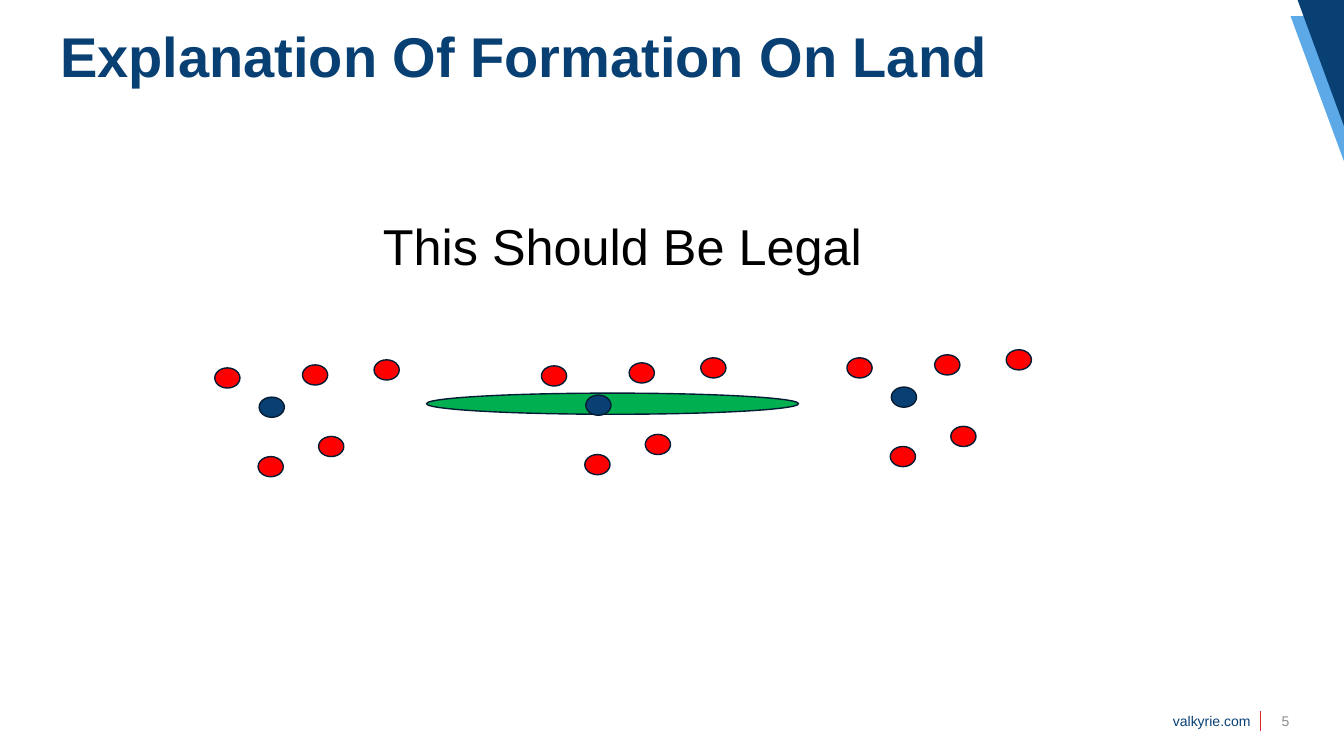
"""Build the slide that explains the legal formation on land."""
from lxml import etree
from pptx import Presentation
from pptx.dml.color import RGBColor
from pptx.enum.shapes import MSO_CONNECTOR, MSO_SHAPE
from pptx.enum.text import MSO_ANCHOR, PP_ALIGN
from pptx.oxml.ns import qn
from pptx.util import Inches, Pt

NAVY = RGBColor(0x09, 0x40, 0x74)
SKY = RGBColor(0x5D, 0xA9, 0xE8)
OUTLINE = RGBColor(0x04, 0x1C, 0x33)
GREEN = RGBColor(0x00, 0xB0, 0x50)
RED = RGBColor(0xFF, 0x00, 0x00)
DIVIDER = RGBColor(0xD9, 0x28, 0x2F)
GRAY = RGBColor(0x8C, 0x8C, 0x8C)
BLACK = RGBColor(0x00, 0x00, 0x00)

FORMATION_ORIGINS = [(5.37, 3.55), (2.13, 3.57), (8.4, 3.47)]
LEADER_OFFSET = (0.44, 0.37)
MEMBER_OFFSETS = [(0.87, 0.05), (0, 0.08), (1.58, 0), (1.03, 0.76), (0.43, 0.96)]


def add_corner(s, points, color):
    """Draw one filled corner stripe through the points."""
    corners = [(Inches(x), Inches(y)) for x, y in points]
    builder = s.shapes.build_freeform(*corners[0])
    builder.add_line_segments(corners[1:], close=True)
    sp = builder.convert_to_shape()
    sp.shadow.inherit = False
    sp.fill.solid()
    sp.fill.fore_color.rgb = color
    sp.line.fill.background()


def add_text(s, box, text, size, color, align=PP_ALIGN.LEFT, bold=False,
             anchor=MSO_ANCHOR.MIDDLE, wrap=True, spacing=1.0):
    """Add a single-line text box."""
    sp = s.shapes.add_textbox(*map(Inches, box))
    tf = sp.text_frame
    tf.word_wrap = wrap
    tf.vertical_anchor = anchor
    p = tf.paragraphs[0]
    p.alignment = align
    p.line_spacing = spacing
    r = p.add_run()
    r.text = text
    r.font.name = "Arial"
    r.font.size = Pt(size)
    r.font.bold = bold
    r.font.color.rgb = color


def add_ellipse(shapes, box, color):
    """Add an outlined ellipse to a slide or a group."""
    sp = shapes.add_shape(MSO_SHAPE.OVAL, *map(Inches, box))
    sp.shadow.inherit = False
    sp.fill.solid()
    sp.fill.fore_color.rgb = color
    sp.line.color.rgb = OUTLINE
    sp.line.width = Pt(1)


def add_formation(s, left, top):
    """Group a leader with the members around it."""
    group = s.shapes.add_group_shape()
    dots = [(LEADER_OFFSET, NAVY)] + [(offset, RED) for offset in MEMBER_OFFSETS]
    for (dx, dy), color in dots:
        add_ellipse(group.shapes, (left + dx, top + dy, 0.25, 0.2), color)


def add_divider(s, x, top, bottom):
    """Draw the vertical line beside the page number."""
    line = s.shapes.add_connector(MSO_CONNECTOR.STRAIGHT, Inches(x), Inches(top),
                                  Inches(x), Inches(bottom))
    line.line.color.rgb = DIVIDER
    line.line.width = Pt(1)
    etree.SubElement(line._element.spPr, qn("a:effectLst"))


def main():
    """Build and save the slide."""
    prs = Presentation()
    prs.slide_width, prs.slide_height = Inches(13.33), Inches(7.5)
    s = prs.slides.add_slide(prs.slide_layouts[6])

    add_corner(s, [(13.33, 0.16), (12.8, 0.16), (13.33, 1.6)], SKY)
    add_corner(s, [(13.33, 0), (12.87, 0), (13.33, 1.25)], NAVY)
    add_text(s, (11.31, 7.02, 1.19, 0.27), "valkyrie.com", 10, NAVY, PP_ALIGN.RIGHT)
    add_divider(s, 12.5, 7.05, 7.25)
    add_text(s, (0.5, 0.13, 11.5, 0.92), "Explanation Of Formation On Land", 40, NAVY,
             bold=True, spacing=0.9)
    add_text(s, (12.5, 6.95, 0.5, 0.4), "5", 10, GRAY, PP_ALIGN.CENTER)

    add_ellipse(s.shapes, (4.23, 3.9, 3.69, 0.21), GREEN)
    for left, top in FORMATION_ORIGINS:
        add_formation(s, left, top)
    add_text(s, (3.7, 2.08, 5, 0.71), "This Should Be Legal", 36, BLACK,
             anchor=MSO_ANCHOR.TOP, wrap=False)

    prs.save("out.pptx")


if __name__ == "__main__":
    main()
